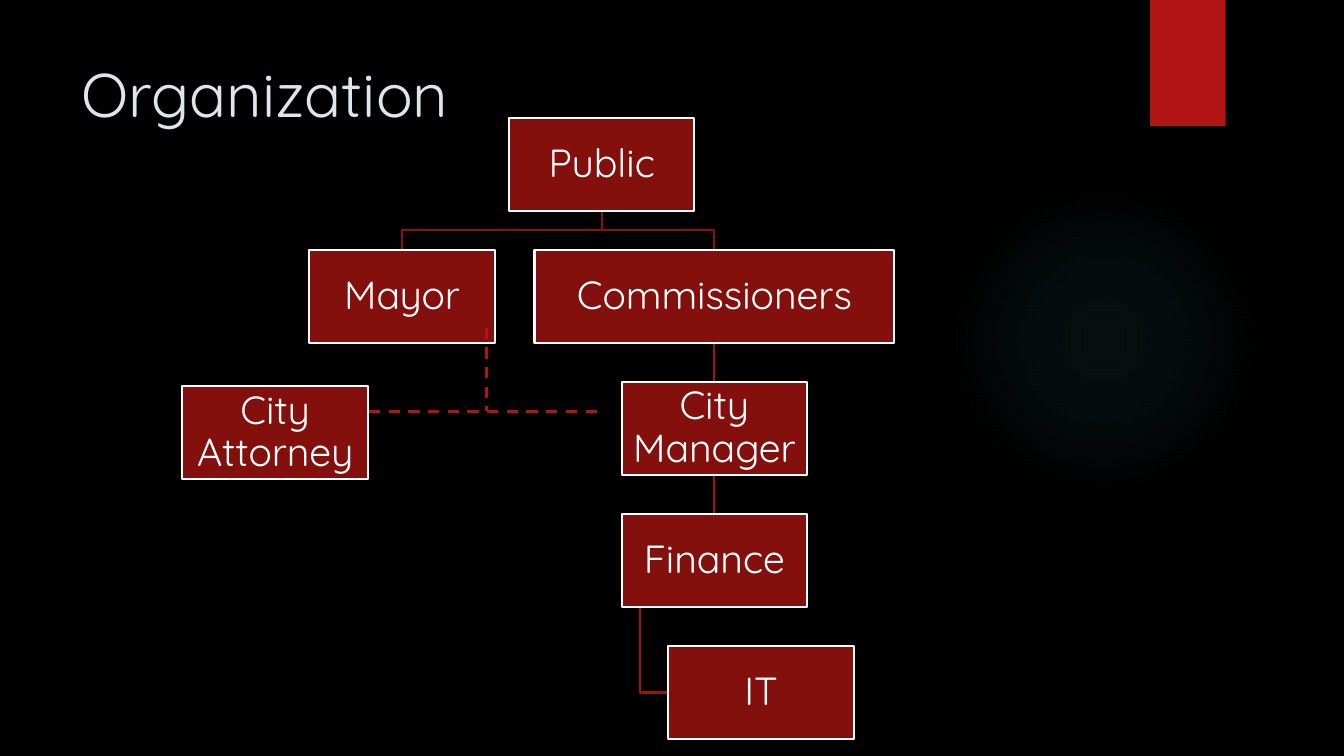
import pptx
import pptx.dml.color
import pptx.enum.dml
import pptx.enum.shapes
import pptx.enum.text
import pptx.oxml
import pptx.oxml.ns
import pptx.util

Pt = pptx.util.Pt
SHAPES = pptx.enum.shapes.MSO_SHAPE
ANCHORS = pptx.enum.text.MSO_ANCHOR
ALIGNS = pptx.enum.text.PP_ALIGN

BOX_WIDTH, BOX_HEIGHT = 132.5, 66.25
FIRST_ROW, ROW_PITCH = 84.24, 94.32
PUBLIC_X, MAYOR_X, MAIN_X, IT_X, ATTORNEY_X = 429.84, 287.28, 510.3, 543.6, 196.6
ATTORNEY_TOP = 275.8


def color(hex_code):
    return pptx.dml.color.RGBColor.from_string(hex_code)


def draw_xml(xml):
    namespace = pptx.oxml.ns.nsdecls("a")
    return pptx.oxml.parse_xml(xml.replace(">", f" {namespace}>", 1))


def row_top(row):
    return FIRST_ROW + row * ROW_PITCH


def write_text(frame, text, size, ink, align=ALIGNS.LEFT, anchor=ANCHORS.TOP,
               inset=None, line_spacing=None):
    frame.word_wrap = True
    frame.auto_size = pptx.enum.text.MSO_AUTO_SIZE.NONE
    frame.vertical_anchor = anchor
    if inset is not None:
        frame.margin_left = frame.margin_right = Pt(inset)
        frame.margin_top = frame.margin_bottom = Pt(inset)
    paragraph = frame.paragraphs[0]
    paragraph.alignment = align
    paragraph.line_spacing = line_spacing
    run = paragraph.add_run()
    run.text = text
    run.font.name = "Quicksand"
    run.font.size = Pt(size)
    run.font.color.rgb = color(ink)


def add_block(slide, kind, left, top, width, height, fill=None, line=None):
    block = slide.shapes.add_shape(kind, Pt(left), Pt(top), Pt(width), Pt(height))
    block.shadow.inherit = False
    if fill:
        block.fill.solid()
        block.fill.fore_color.rgb = color(fill)
    else:
        block.fill.background()
    if line:
        block.line.color.rgb = color(line)
        block.line.width = Pt(1.5)
    else:
        block.line.fill.background()
    return block


def add_glow(slide):
    glow = add_block(slide, SHAPES.OVAL, 677.5, 131.8, 221.8, 221.8)
    stops = "".join(
        f'<a:gs pos="{position}000"><a:srgbClr val="50B9C1">'
        f'<a:alpha val="{alpha}000"/></a:srgbClr></a:gs>'
        for position, alpha in ((0, 7), (36, 6), (69, 0)))
    gradient = draw_xml(
        f'<a:gradFill><a:gsLst>{stops}</a:gsLst><a:path path="circle">'
        '<a:fillToRect l="50000" t="50000" r="50000" b="50000"/></a:path></a:gradFill>')
    properties = glow.element.spPr
    properties.replace(properties.find(pptx.oxml.ns.qn("a:noFill")), gradient)


def add_ribbon(slide):
    ribbon = add_block(slide, SHAPES.RECTANGLE, 821.5, 0, 54, 90, fill="B01513")
    effects = ribbon.element.spPr.find(pptx.oxml.ns.qn("a:effectLst"))
    effects.append(draw_xml(
        f'<a:outerShdw blurRad="{Pt(3)}" dist="{Pt(2)}" dir="5400000" rotWithShape="0">'
        '<a:srgbClr val="000000"><a:alpha val="45000"/></a:srgbClr></a:outerShdw>'))


def add_role(slide, role, center, top, width=BOX_WIDTH):
    box = add_block(slide, SHAPES.RECTANGLE, center - width / 2, top, width, BOX_HEIGHT,
                    fill="84100E", line="FFFFFF")
    write_text(box.text_frame, role, size=28, ink="FFFFFF", align=ALIGNS.CENTER,
               anchor=ANCHORS.MIDDLE, inset=1.4, line_spacing=0.9)


def add_elbow(slide, points, ink):
    start, *corners = [(Pt(x), Pt(y)) for x, y in points]
    builder = slide.shapes.build_freeform(*start)
    builder.add_line_segments(corners, close=False)
    elbow = builder.convert_to_shape()
    elbow.shadow.inherit = False
    elbow.fill.background()
    elbow.line.color.rgb = color(ink)
    elbow.line.width = Pt(1.5)


def add_link(slide, start, end, ink, width=1.5, dashed=False):
    link = slide.shapes.add_connector(
        pptx.enum.shapes.MSO_CONNECTOR.STRAIGHT, *map(Pt, start + end))
    link.line.color.rgb = color(ink)
    link.line.width = Pt(width)
    if dashed:
        link.line.dash_style = pptx.enum.dml.MSO_LINE.DASH
    link.element.spPr.append(draw_xml("<a:effectLst></a:effectLst>"))


def add_reporting_lines(slide):
    finance_bottom = row_top(3) + BOX_HEIGHT
    it_middle = row_top(4) + BOX_HEIGHT / 2
    add_elbow(slide, [(457.2, finance_bottom), (457.2, it_middle),
                      (IT_X - BOX_WIDTH / 2, it_middle)], "A01311")
    for row in (1, 2):
        add_link(slide, (MAIN_X, row_top(row) + BOX_HEIGHT),
                 (MAIN_X, row_top(row + 1)), "A01311")
    public_bottom = row_top(0) + BOX_HEIGHT
    fork = (public_bottom + row_top(1)) / 2
    for center in (MAIN_X, MAYOR_X):
        add_elbow(slide, [(PUBLIC_X, public_bottom), (PUBLIC_X, fork),
                          (center, fork), (center, row_top(1))], "8D110F")


def add_advisory_lines(slide):
    junction = (347.8, 293.8)
    for start, end in (((347.8, 234), junction),
                       (junction, (432, 293.8)),
                       ((263.5, 293.8), junction)):
        add_link(slide, start, end, "B01513", width=2, dashed=True)


def main():
    presentation = pptx.Presentation()
    presentation.slide_width, presentation.slide_height = Pt(960), Pt(540)
    slide = presentation.slides.add_slide(presentation.slide_layouts[5])
    slide.background.fill.solid()
    slide.background.fill.fore_color.rgb = color("000000")

    add_glow(slide)
    add_ribbon(slide)
    title = slide.shapes.title
    title.left, title.top, title.width, title.height = map(Pt, (51.1, 36, 740.2, 110.2))
    write_text(title.text_frame, "Organization", size=44, ink="DCE7EC")

    add_reporting_lines(slide)
    add_role(slide, "Public", PUBLIC_X, row_top(0))
    add_role(slide, "Mayor", MAYOR_X, row_top(1))
    add_role(slide, "Commissioners", MAIN_X, row_top(1), width=257)
    add_role(slide, "City Manager", MAIN_X, row_top(2))
    add_role(slide, "Finance", MAIN_X, row_top(3))
    add_role(slide, "IT", IT_X, row_top(4))
    add_role(slide, "City Attorney", ATTORNEY_X, ATTORNEY_TOP)
    add_advisory_lines(slide)
    presentation.save("out.pptx")


if __name__ == "__main__":
    main()
